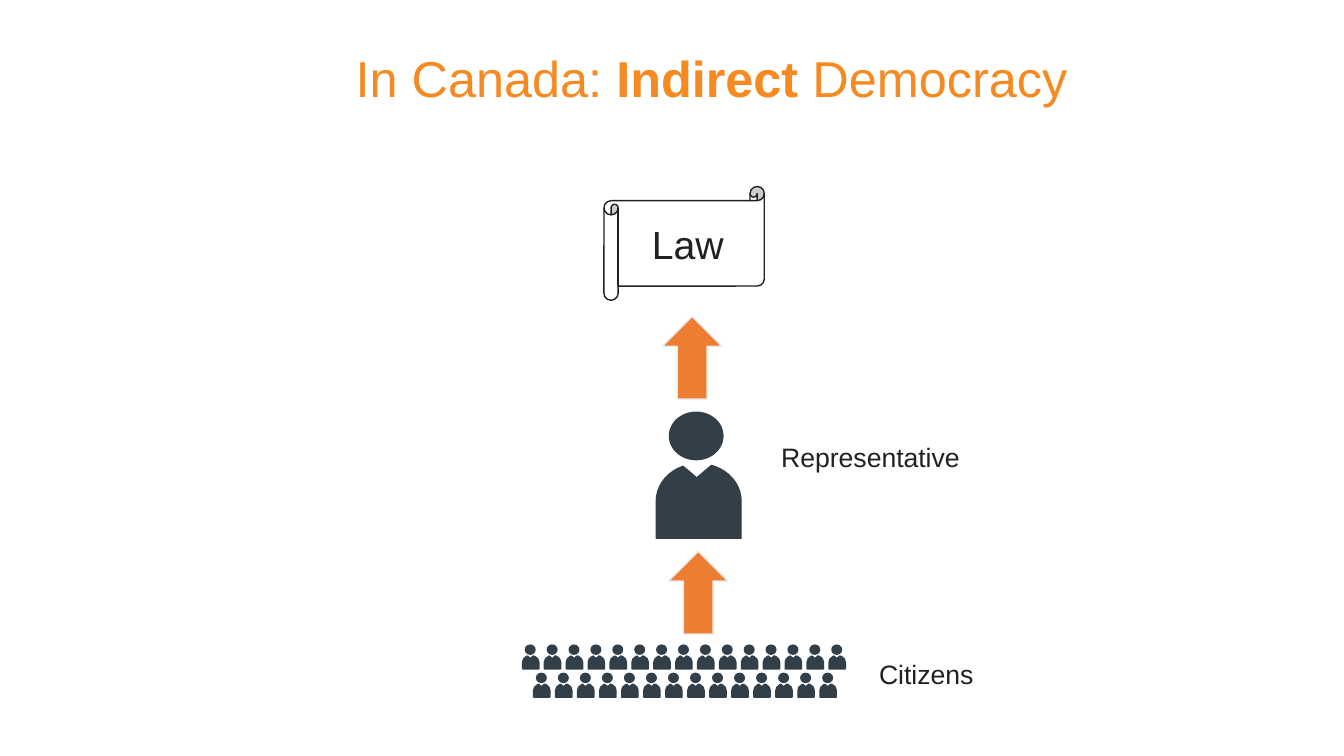
import pptx
import pptx.dml.color
import pptx.enum.shapes
import pptx.enum.text
import pptx.util

PX = 9144
FONT = "Arial"
COLORS = {
    "title": "F6891F",
    "text": "212121",
    "person": "333F48",
    "arrow": "ED7D31",
    "arrow_edge": "EAEAEA",
    "white": "FFFFFF",
}
PRESET = pptx.enum.shapes.MSO_SHAPE
CITIZEN_ROWS = [(519, 640, 304, 15), (530, 668, 284, 14)]
PERSON_PARTS = [
    (PRESET.FLOWCHART_DELAY, (4, 46, 74, 84), 270, "person", "person"),
    (PRESET.ISOSCELES_TRIANGLE, (0, 31, 78, 33), 180, "white", None),
    (PRESET.OVAL, (12, 0, 53, 47), 0, "person", "person"),
]
PERSON_SIZE = (78, 125)


def color(name):
    """Return the named colour as an RGB value."""
    return pptx.dml.color.RGBColor.from_string(COLORS[name])


def emu(box):
    """Turn a box in px into whole EMU lengths."""
    return [round(length * PX) for length in box]


def add_preset(shapes, preset, box, fill, line):
    """Add a flat preset shape with an optional outline."""
    shape = shapes.add_shape(preset, *emu(box))
    shape.shadow.inherit = False
    shape.fill.solid()
    shape.fill.fore_color.rgb = color(fill)
    if line:
        shape.line.color.rgb = color(line)
        shape.line.width = pptx.util.Pt(1)
    else:
        shape.line.fill.background()
    return shape


def set_font(paragraph, size, name):
    """Set the font of a whole paragraph."""
    paragraph.font.name = FONT
    paragraph.font.size = pptx.util.Pt(size)
    paragraph.font.color.rgb = color(name)


def add_text(slide, box, runs, size, name, wrap=True):
    """Add a one-line text box from (text, bold) runs."""
    frame = slide.shapes.add_textbox(*emu(box)).text_frame
    frame.word_wrap = wrap
    frame.auto_size = pptx.enum.text.MSO_AUTO_SIZE.SHAPE_TO_FIT_TEXT
    paragraph = frame.paragraphs[0]
    for text, bold in runs:
        run = paragraph.add_run()
        run.text = text
        if bold:
            run.font.bold = True
    set_font(paragraph, size, name)


def add_person(shapes, box):
    """Draw a person scaled to fill the box."""
    left, top, width, height = box
    across, down = width / PERSON_SIZE[0], height / PERSON_SIZE[1]
    for preset, (x, y, w, h), rotation, fill, line in PERSON_PARTS:
        part = (left + x * across, top + y * down, w * across, h * down)
        add_preset(shapes, preset, part, fill, line).rotation = rotation


def add_citizens(slide):
    """Draw the evenly spaced rows of citizens as one group."""
    shapes = slide.shapes.add_group_shape().shapes
    for left, top, span, count in CITIZEN_ROWS:
        for index in range(count):
            add_person(shapes, (left + index * span / (count - 1), top, 14, 24))


def add_law(slide, box):
    """Draw the scroll that stands for the law."""
    scroll = add_preset(slide.shapes, PRESET.HORIZONTAL_SCROLL, box, "white", "text")
    frame = scroll.text_frame
    frame.vertical_anchor = pptx.enum.text.MSO_ANCHOR.MIDDLE
    paragraph = frame.paragraphs[0]
    paragraph.text = "Law"
    paragraph.alignment = pptx.enum.text.PP_ALIGN.CENTER
    set_font(paragraph, 28, "text")


def build_democracy_slide(slide):
    """Place the title and the chain from citizens up to the law."""
    title = [("In Canada: ", False), ("Indirect ", True), ("Democracy", False)]
    add_text(slide, (343, 42, 733, 71), title, 36, "title", wrap=False)
    add_citizens(slide)
    add_person(slide.shapes.add_group_shape().shapes, (652, 409, *PERSON_SIZE))
    for left, top in [(663, 547), (657, 314)]:
        add_preset(slide.shapes, PRESET.UP_ARROW, (left, top, 59, 82), "arrow", "arrow_edge")
    add_law(slide, (599, 185, 159, 113))
    add_text(slide, (765, 433, 207, 74), [("Representative", False)], 19, "text")
    add_text(slide, (862, 648, 171, 42), [("Citizens", False)], 19, "text")


def main():
    """Build and save the presentation."""
    presentation = pptx.Presentation()
    presentation.slide_width, presentation.slide_height = emu((1333, 750))
    build_democracy_slide(presentation.slides.add_slide(presentation.slide_layouts[6]))
    presentation.save("out.pptx")


if __name__ == "__main__":
    main()
